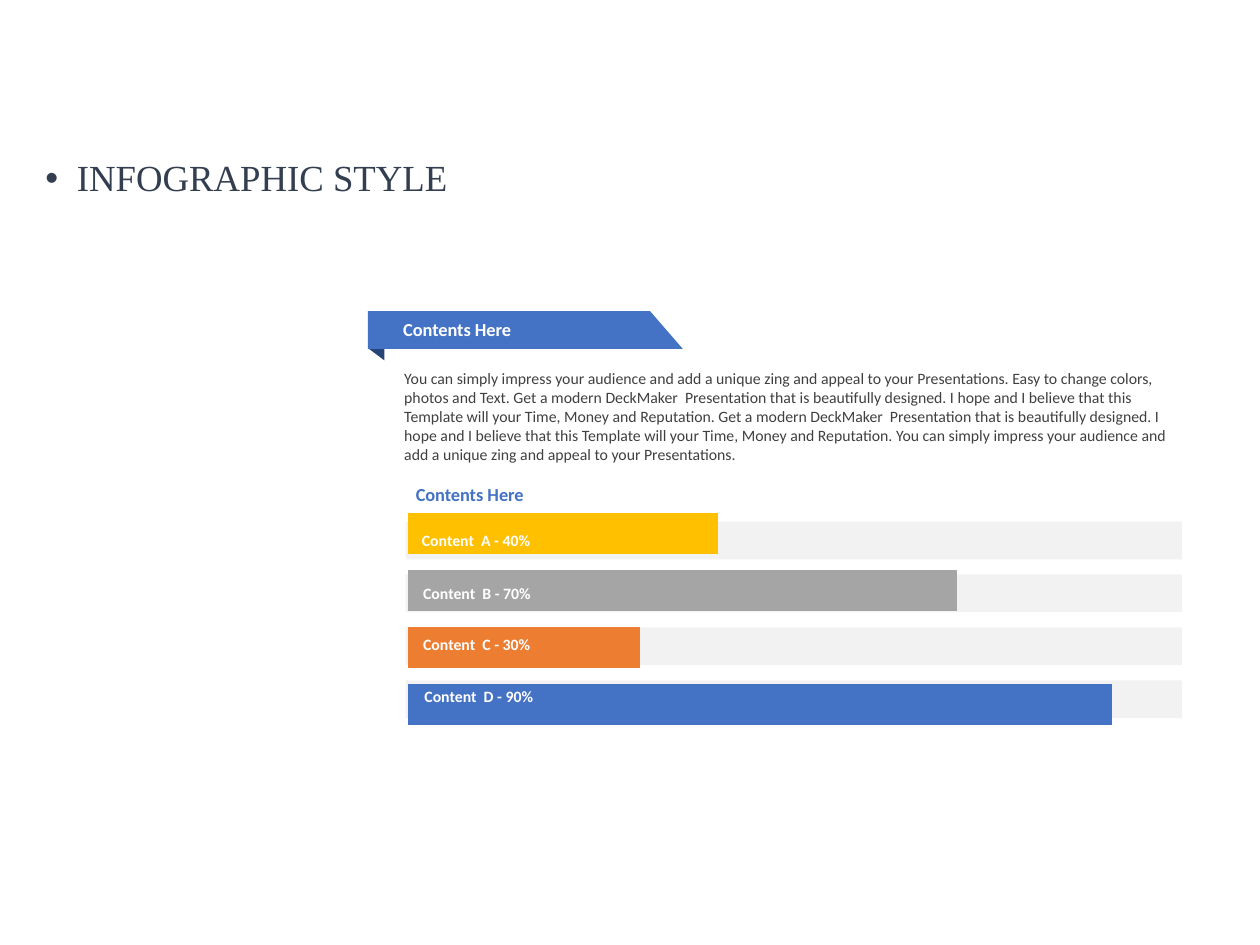
from dataclasses import dataclass

from lxml.etree import SubElement
from pptx import Presentation
from pptx.chart.data import CategoryChartData
from pptx.dml.color import RGBColor
from pptx.enum.chart import XL_CHART_TYPE
from pptx.enum.shapes import MSO_SHAPE
from pptx.enum.text import MSO_ANCHOR, MSO_AUTO_SIZE
from pptx.oxml.ns import qn
from pptx.util import Inches, Pt

HUES = {
    "navy": "333F50", "fold": "264478", "blue": "4472C4", "orange": "ED7D31",
    "grey": "A5A5A5", "gold": "FFC000", "track": "F2F2F2", "text": "404040",
    "white": "FFFFFF", "black": "000000",
}
FONT = "Calibri"


@dataclass
class Bar:
    label: str
    value: int
    hue: str
    left: float
    top: float


@dataclass
class Label:
    text: str
    box: tuple[float, float, float, float]
    size: float
    hue: str
    bold: bool = True
    anchor: MSO_ANCHOR = MSO_ANCHOR.MIDDLE
    grow: bool = False
    inset: float = 0.1


# Bars from top to bottom, with the corner of each label
BARS = [
    Bar("Content  A - 40%", 44, "gold", 3.25, 4.16),
    Bar("Content  B - 70%", 78, "grey", 3.26, 4.58),
    Bar("Content  C - 30%", 33, "orange", 3.26, 4.99),
    Bar("Content  D - 90%", 100, "blue", 3.27, 5.4),
]
STORY = (
    "You can simply impress your audience and add a unique zing and appeal to "
    "your Presentations. Easy to change colors, photos and Text. Get a modern "
    "DeckMaker  Presentation that is beautifully designed. I hope and I believe "
    "that this Template will your Time, Money and Reputation. Get a modern "
    "DeckMaker  Presentation that is beautifully designed. I hope and I believe "
    "that this Template will your Time, Money and Reputation. You can simply "
    "impress your audience and add a unique zing and appeal to your Presentations."
)


def color(hue: str) -> RGBColor:
    return RGBColor.from_string(HUES[hue])


def paint(shape, hue: str) -> None:
    shape.shadow.inherit = False
    shape.fill.solid()
    shape.fill.fore_color.rgb = color(hue)
    shape.line.fill.background()


def add_run(para, text: str, size: float, hue: str, font: str = FONT,
            bold: bool = False) -> None:
    run = para.add_run()
    run.text = text
    run.font.name = font
    run.font.size = Pt(size)
    run.font.bold = bold
    run.font.color.rgb = color(hue)


def add_label(slide, item: Label) -> None:
    frame = slide.shapes.add_textbox(*map(Inches, item.box)).text_frame
    frame.word_wrap = True
    frame.margin_left = Inches(item.inset)
    frame.vertical_anchor = item.anchor
    if item.grow:
        frame.auto_size = MSO_AUTO_SIZE.SHAPE_TO_FIT_TEXT
    add_run(frame.paragraphs[0], item.text, item.size, item.hue, bold=item.bold)


def add_outline(group, points: list[tuple[float, float]], hue: str) -> None:
    dots = [(Inches(x), Inches(y)) for x, y in points]
    form = group.shapes.build_freeform(*dots[0])
    form.add_line_segments(dots[1:], close=True)
    paint(form.convert_to_shape(), hue)


def add_heading(slide, text: str) -> None:
    title, body = slide.shapes.title, slide.placeholders[1]
    title.element.getparent().remove(title.element)
    body.left, body.top, body.width, body.height = map(
        Inches, (0.26, 1.22, 9.49, 0.59))
    body.text_frame.vertical_anchor = MSO_ANCHOR.TOP
    para = body.text_frame.paragraphs[0]
    props = para._p.get_or_add_pPr()
    props.set("marL", str(Inches(0.25)))
    props.set("indent", str(Inches(-0.25)))
    SubElement(props, qn("a:buFont"), typeface="Arial")
    SubElement(props, qn("a:buChar"), char="•")
    para.line_spacing = 0.9
    para.space_before = Pt(0)
    add_run(para, text, 21, "navy", "Times New Roman")


def add_bars(slide, bars: list[Bar]) -> None:
    # The category axis runs upward, so the last bar comes first
    rows = bars[::-1]
    data = CategoryChartData()
    data.categories = [str(n + 1) for n in range(len(rows))]
    data.add_series("Series 1", [row.value for row in rows])
    chart = slide.shapes.add_chart(
        XL_CHART_TYPE.BAR_STACKED,
        *map(Inches, (3.11, 3.97, 6.47, 1.89)), data).chart
    chart.has_legend = False
    chart.has_title = False
    chart.font.name = FONT
    chart.font.size = Pt(12)
    chart.font.color.rgb = color("black")
    axis = chart.value_axis
    axis.minimum_scale, axis.maximum_scale = 0, 110
    axis.has_major_gridlines = False
    axis.visible = chart.category_axis.visible = False

    plot = chart.plots[0]
    plot.gap_width, plot.overlap = 40, 100
    plot.vary_by_categories = False
    series = plot.series[0]
    series.format.fill.solid()
    series.format.fill.fore_color.rgb = color("text")
    for n, row in enumerate(rows):
        fill = series.points[n].format.fill
        fill.solid()
        fill.fore_color.rgb = color(row.hue)

    # Fixed plot area
    area = chart._chartSpace.chart.plotArea
    for old in area.findall(qn("c:layout")):
        area.remove(old)
    layout = area.makeelement(qn("c:layout"))
    area.insert(0, layout)
    manual = SubElement(layout, qn("c:manualLayout"))
    for tag, val in (("layoutTarget", "inner"), ("xMode", "edge"),
                     ("yMode", "edge"), ("x", "0.02"), ("y", "0.02"),
                     ("w", "0.95"), ("h", "0.96")):
        SubElement(manual, qn(f"c:{tag}"), val=val)


def main() -> None:
    deck = Presentation()
    deck.slide_width, deck.slide_height = Inches(10), Inches(7.5)
    slide = deck.slides.add_slide(deck.slide_layouts[1])
    add_heading(slide, "INFOGRAPHIC STYLE")

    # Ribbon with its fold
    group = slide.shapes.add_group_shape()
    add_outline(group, [(3.05, 2.49), (2.93, 2.48), (2.93, 2.77), (3.05, 2.86)],
                "fold")
    add_outline(group, [(2.92, 2.47), (5.16, 2.47), (5.42, 2.77), (2.92, 2.77)],
                "blue")

    # Tracks, bars and their labels
    for n in range(len(BARS)):
        track = slide.shapes.add_shape(
            MSO_SHAPE.RECTANGLE,
            *map(Inches, (3.22, 4.14 + 0.42 * n, 6.16, 0.3)))
        paint(track, "track")
    add_bars(slide, BARS)
    for bar in BARS:
        add_label(slide, Label(bar.label, (bar.left, bar.top, 1.28, 0.25),
                               9, "white", grow=True))

    # Headings and story
    for box, hue in (((3.11, 2.46, 1.89, 0.31), "white"),
                     ((3.21, 3.8, 1.44, 0.24), "blue")):
        add_label(slide, Label("Contents Here", box, 10.5, hue, inset=0.09))
    add_label(slide, Label(STORY, (3.11, 2.88, 6.41, 0.86), 9, "text",
                           bold=False, anchor=MSO_ANCHOR.TOP, grow=True))
    deck.save("out.pptx")


if __name__ == "__main__":
    main()
